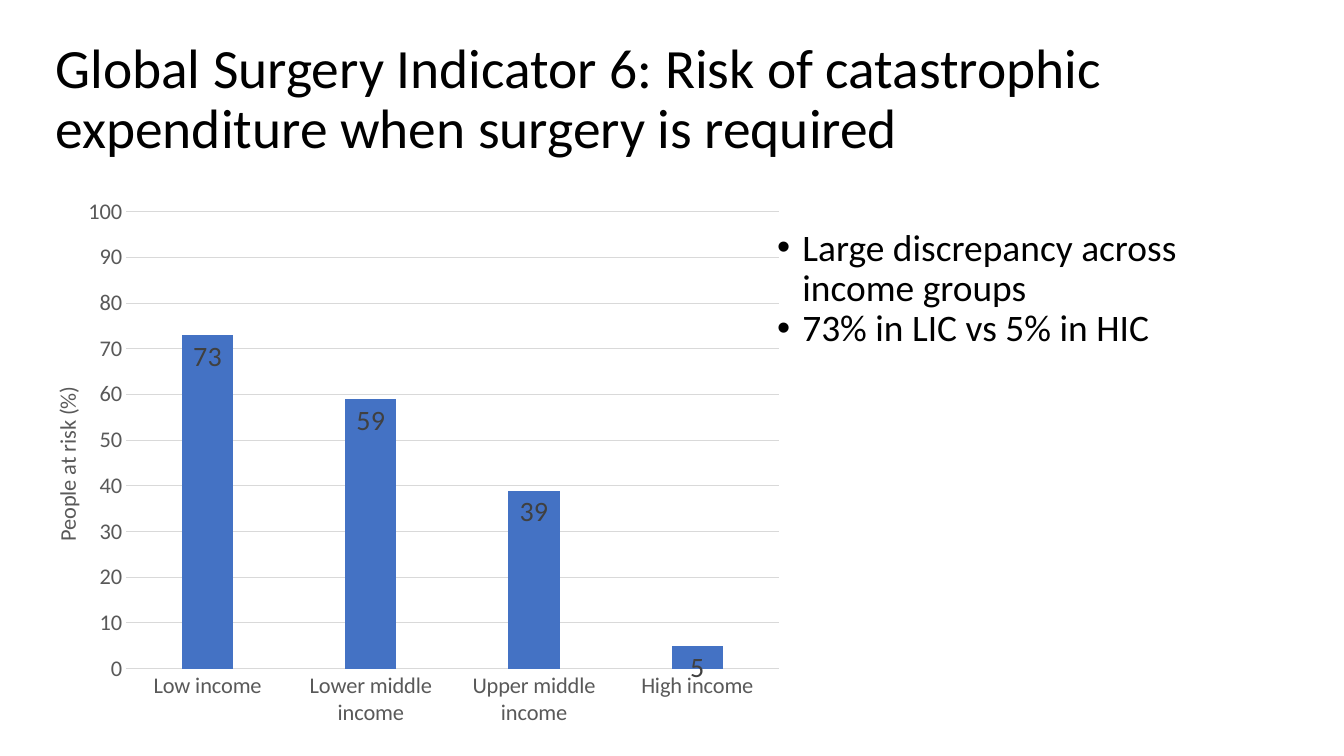
"""Build a slide on the risk of catastrophic expenditure for surgery."""
from lxml.etree import SubElement
from pptx import Presentation
from pptx.chart.data import CategoryChartData
from pptx.dml.color import RGBColor
from pptx.enum.chart import XL_CHART_TYPE, XL_LABEL_POSITION, XL_TICK_MARK
from pptx.enum.text import MSO_ANCHOR
from pptx.oxml import parse_xml
from pptx.oxml.ns import nsdecls, qn
from pptx.util import Inches, Pt

INK = {"text": "000000", "axis": "595959", "grid": "D9D9D9",
       "bar": "4472C4", "label": "404040"}
FACE = "Calibri"
WIDE, HIGH = Inches(13.33), Inches(7.5)


def style(font, size, ink):
    font.name, font.size, font.bold = FACE, Pt(size), False
    font.color.rgb = RGBColor.from_string(INK[ink])


def write(frame, lines, size=26.7, bullet=False, anchor=MSO_ANCHOR.TOP):
    frame.word_wrap = True
    frame.vertical_anchor = anchor
    frame.margin_left = frame.margin_right = Inches(0.1)
    frame.margin_top = frame.margin_bottom = Inches(0.1)
    for i, line in enumerate(lines):
        para = frame.add_paragraph() if i else frame.paragraphs[0]
        para.line_spacing = 0.9
        para.space_before = Pt(0)
        if bullet:
            props = para._p.get_or_add_pPr()
            props.set("marL", str(Inches(0.25)))
            props.set("indent", str(-Inches(0.25)))
            SubElement(props, qn("a:buFont"), typeface="Arial")
            SubElement(props, qn("a:buChar"), char="•")
        run = para.add_run()
        run.text = line
        style(run.font, size, "text")


deck = Presentation()
deck.slide_width, deck.slide_height = WIDE, HIGH
slide = deck.slides.add_slide(deck.slide_layouts[5])

title = slide.shapes.title
title.left, title.top = Inches(0.45), Inches(0.36)
title.width, title.height = Inches(12.42), Inches(1.27)
write(title.text_frame,
      ["Global Surgery Indicator 6: Risk of catastrophic expenditure when surgery is required"],
      size=39.6, anchor=MSO_ANCHOR.MIDDLE)
title.text_frame.paragraphs[0].alignment = 1

data = CategoryChartData(number_format="0")
data.categories = ["Low income", "Lower middle income",
                   "Upper middle income", "High income"]
data.add_series("Series 1", [73, 59, 39, 5])
chart = slide.shapes.add_chart(
    XL_CHART_TYPE.COLUMN_CLUSTERED, Inches(0.17), Inches(1.83),
    Inches(7.71), Inches(5.46), data).chart
chart.has_legend = chart.has_title = False
style(chart.font, 10, "text")

cats, vals = chart.category_axis, chart.value_axis
for axis in (cats, vals):
    axis.major_tick_mark = axis.minor_tick_mark = XL_TICK_MARK.NONE
    style(axis.tick_labels.font, 16, "axis")
vals.minimum_scale, vals.maximum_scale, vals.major_unit = 0, 100, 10
vals.tick_labels.number_format = "0"
vals.tick_labels.number_format_is_linked = False
vals.format.line.fill.background()
for line in (cats.format.line, vals.major_gridlines.format.line):
    line.color.rgb = RGBColor.from_string(INK["grid"])
    line.width = Pt(0.75)

name = vals.axis_title
name.text_frame.text = "People at risk (%)"
style(name.text_frame.paragraphs[0].runs[0].font, 16, "axis")
name.text_frame._txBody.bodyPr.set("rot", "-5400000")
name.text_frame._txBody.bodyPr.set("vert", "horz")

plot = chart.plots[0]
plot.gap_width, plot.overlap, plot.vary_by_categories = 219, -27, False
bars = plot.series[0]
bars.format.fill.solid()
bars.format.fill.fore_color.rgb = RGBColor.from_string(INK["bar"])
tags = bars.data_labels
tags.show_value = True
tags.position = XL_LABEL_POSITION.INSIDE_END
tags.number_format, tags.number_format_is_linked = "0", False
style(tags.font, 20, "label")

area = chart._chartSpace.chart.plotArea
places = [
    (area, 0, [("layoutTarget", "inner"), ("xMode", "edge"), ("yMode", "edge"),
               ("x", 0.14), ("y", 0.05), ("w", 0.84), ("h", 0.83)]),
    (name._element, 1, [("xMode", "edge"), ("yMode", "edge"),
                        ("x", 0.04), ("y", 0.36)]),
]
for node, spot, rules in places:
    for old in node.findall(qn("c:layout")):
        node.remove(old)
    layout = parse_xml(f"<c:layout {nsdecls('c')}><c:manualLayout/></c:layout>")
    for tag, val in rules:
        SubElement(layout[0], qn("c:" + tag), val=str(val))
    node.insert(spot, layout)

notes = slide.shapes.add_textbox(
    Inches(7.61), Inches(2.17), Inches(5.27), Inches(4.59))
write(notes.text_frame,
      ["Large discrepancy across income groups", "73% in LIC vs 5% in HIC"],
      bullet=True)

deck.save("out.pptx")
